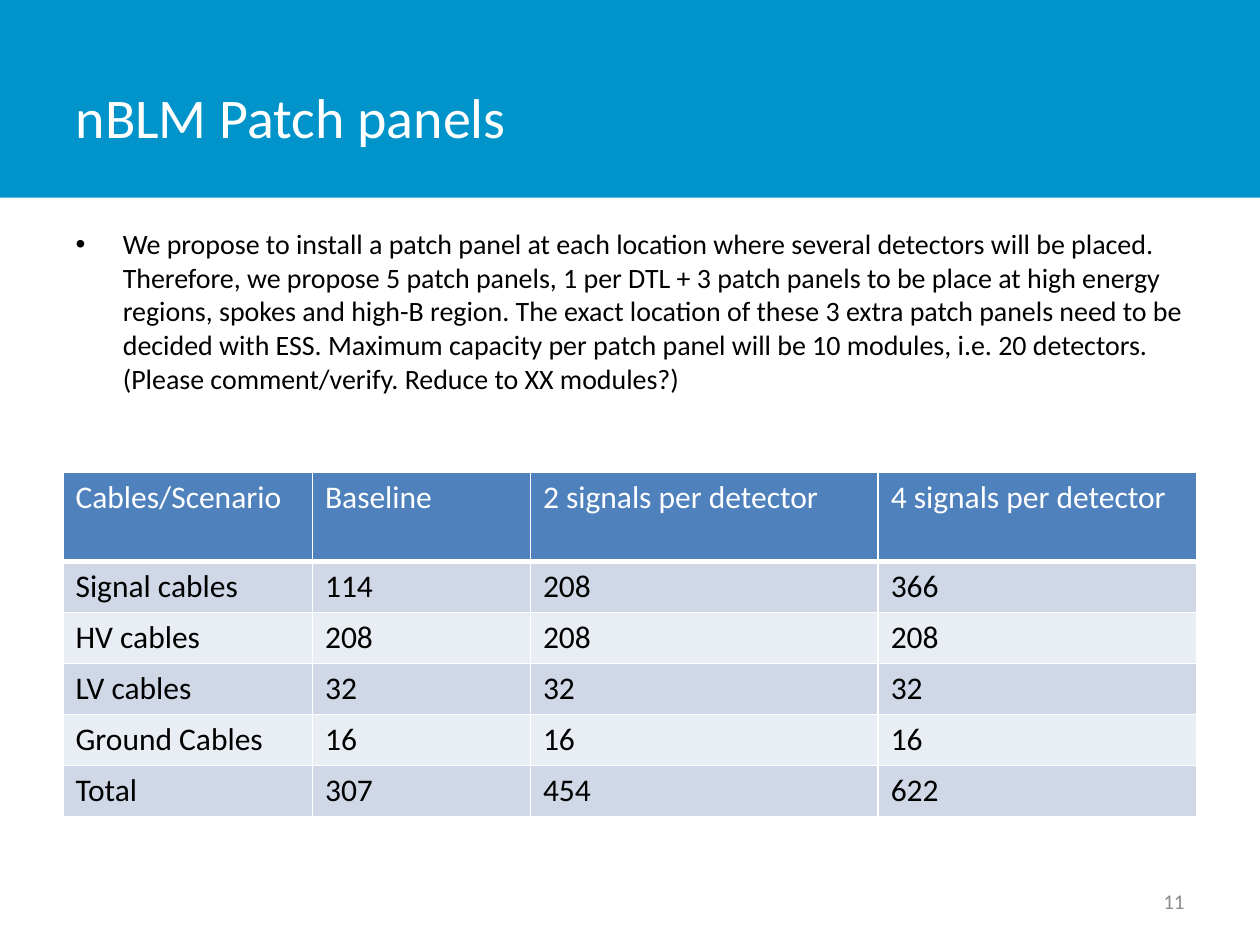
from lxml.etree import SubElement
from pptx import Presentation
from pptx.dml.color import RGBColor
from pptx.enum.shapes import MSO_SHAPE
from pptx.enum.text import MSO_ANCHOR, MSO_AUTO_SIZE, PP_ALIGN
from pptx.oxml.ns import qn
from pptx.util import Inches, Pt

COLUMNS, ROWS = 20, 30
WHITE, BLACK, GREY = "FFFFFF", "000000", "8C8C8C"
BAND_BLUE, HEADER_BLUE = "0094CA", "4F81BD"
STRIPES = ("D0D8E8", "E9EDF4")

PROPOSAL = (
    "We propose to install a patch panel at each location where several "
    "detectors will be placed. Therefore, we propose 5 patch panels, 1 per DTL "
    "+ 3 patch panels to be place at high energy regions, spokes and high-B "
    "region. The exact location of these 3 extra patch panels need to be "
    "decided with ESS. Maximum capacity per patch panel will be 10 modules, "
    "i.e. 20 detectors. (Please comment/verify. Reduce to XX modules?)"
)
CABLE_COUNTS = [
    ("Cables/Scenario", "Baseline", "2 signals per detector", "4 signals per detector"),
    ("Signal cables", "114", "208", "366"),
    ("HV cables", "208", "208", "208"),
    ("LV cables", "32", "32", "32"),
    ("Ground Cables", "16", "16", "16"),
    ("Total", "307", "454", "622"),
]


def color(code):
    return RGBColor.from_string(code)


def assign(target, values):
    for name, value in values.items():
        setattr(target, name, value)


class PanelSlide:
    font_name = "Calibri"

    def __init__(self, deck):
        self.column = deck.slide_width / COLUMNS
        self.row = deck.slide_height / ROWS
        self.slide = deck.slides.add_slide(deck.slide_layouts[1])
        self.shapes = self.slide.shapes

    def box(self, left, top, width, height):
        return [int(left * self.column), int(top * self.row),
                int(width * self.column), int(height * self.row)]

    def set_text(self, frame, text, size, code, align=PP_ALIGN.LEFT, anchor=MSO_ANCHOR.TOP):
        assign(frame, {"text": text, "word_wrap": True, "vertical_anchor": anchor})
        paragraph = frame.paragraphs[0]
        assign(paragraph, {"alignment": align, "space_before": Pt(0)})
        assign(paragraph.font, {"name": self.font_name, "size": Pt(size), "bold": False})
        paragraph.font.color.rgb = color(code)

    def place(self, holder, area):
        assign(holder, dict(zip(("left", "top", "width", "height"), self.box(*area))))
        holder.text_frame.auto_size = MSO_AUTO_SIZE.NONE

    def band(self, area, code):
        band = self.shapes.add_shape(MSO_SHAPE.RECTANGLE, *self.box(*area))
        band.shadow.inherit = False
        band.fill.solid()
        band.fill.fore_color.rgb = color(code)
        band.line.fill.background()
        # Behind the placeholders
        self.shapes._spTree.insert(2, band._element)

    def title(self, area, text):
        self.place(self.shapes.title, area)
        self.set_text(self.shapes.title.text_frame, text, 32, WHITE, anchor=MSO_ANCHOR.MIDDLE)

    def bullet(self, area, text):
        body = self.slide.placeholders[1]
        self.place(body, area)
        properties = body.text_frame.paragraphs[0]._p.get_or_add_pPr()
        indent = Inches(0.38)
        properties.set("marL", str(indent))
        properties.set("indent", str(-indent))
        SubElement(properties, qn("a:buFont"), typeface="Arial")
        SubElement(properties, qn("a:buChar"), char="•")
        self.set_text(body.text_frame, text, 16, BLACK)

    def label(self, area, text):
        label = self.shapes.add_textbox(*self.box(*area))
        self.set_text(label.text_frame, text, 12, GREY, PP_ALIGN.RIGHT, MSO_ANCHOR.MIDDLE)

    def borders(self, cell, widths):
        properties = cell._tc.get_or_add_tcPr()
        for side, width in widths.items():
            line = SubElement(properties, qn(f"a:ln{side}"), w=str(Pt(width)))
            fill = SubElement(line, qn("a:solidFill"))
            SubElement(fill, qn("a:srgbClr"), val=WHITE)

    def table(self, left, top, widths, heights, records):
        area = self.box(left, top, sum(widths), sum(heights))
        table = self.shapes.add_table(len(records), len(widths), *area).table
        for column, width in zip(table.columns, widths):
            column.width = int(width * self.column)
        for row, height in zip(table.rows, heights):
            row.height = int(height * self.row)
        for r, record in enumerate(records):
            header = r == 0
            fill = HEADER_BLUE if header else STRIPES[(r - 1) % 2]
            for c, text in enumerate(record):
                cell = table.cell(r, c)
                self.set_text(cell.text_frame, text, 18, WHITE if header else BLACK)
                # A thick rule divides the header from the counts
                self.borders(cell, {"L": 1, "R": 1, "T": 3 if r == 1 else 1,
                                    "B": 3 if header else 1})
                cell.fill.solid()
                cell.fill.fore_color.rgb = color(fill)


def main():
    deck = Presentation()
    assign(deck, {"slide_width": Inches(10), "slide_height": Inches(7.5)})
    panels = PanelSlide(deck)

    # Heading
    panels.band((0, 0, COLUMNS, 6.28), BAND_BLUE)
    panels.title((1, 1.2, 15.62, 5), "nBLM Patch panels")

    # Proposal
    panels.bullet((1, 7, 18, 19.8), PROPOSAL)

    # Cable counts per scenario
    panels.table(1, 15, (3.96, 3.46, 5.52, 5.06), [2.82] + [1.62] * 5, CABLE_COUNTS)

    # Slide number
    panels.label((14.34, 27.8, 4.66, 1.6), "11")
    deck.save("out.pptx")


if __name__ == "__main__":
    main()
